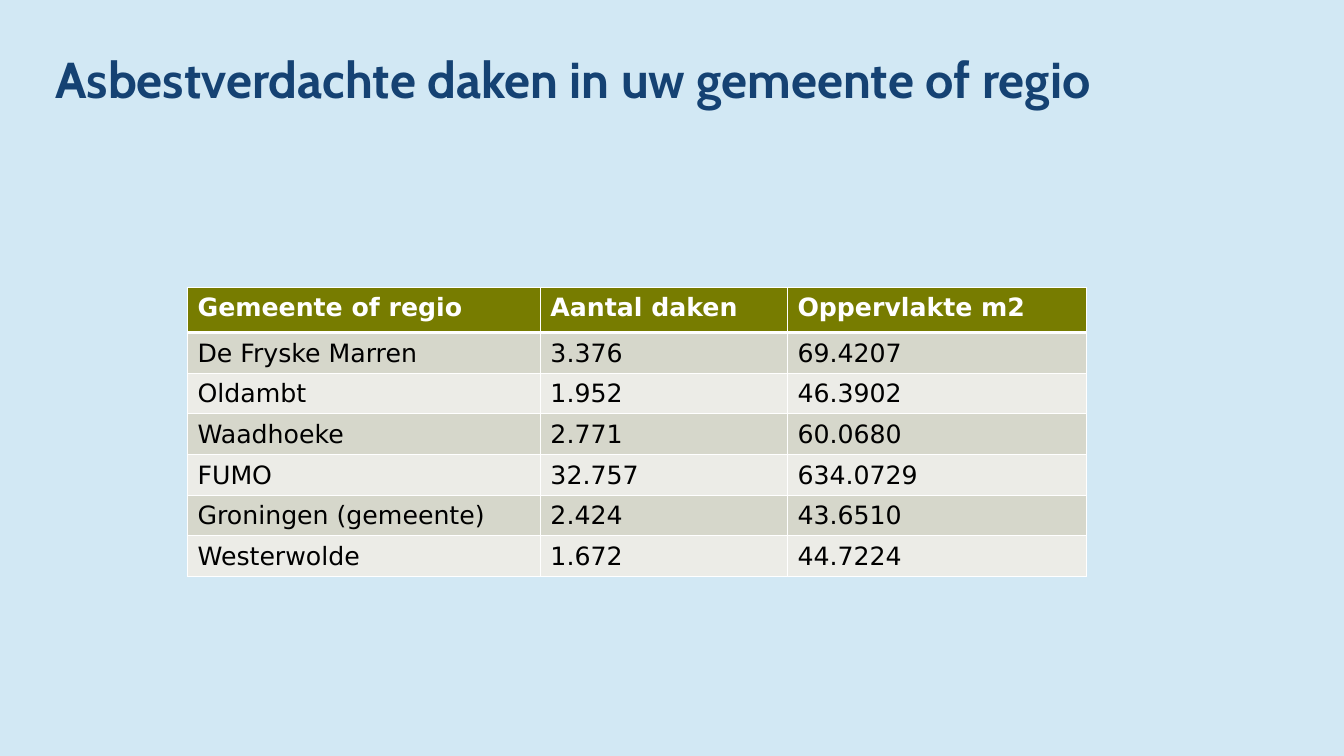
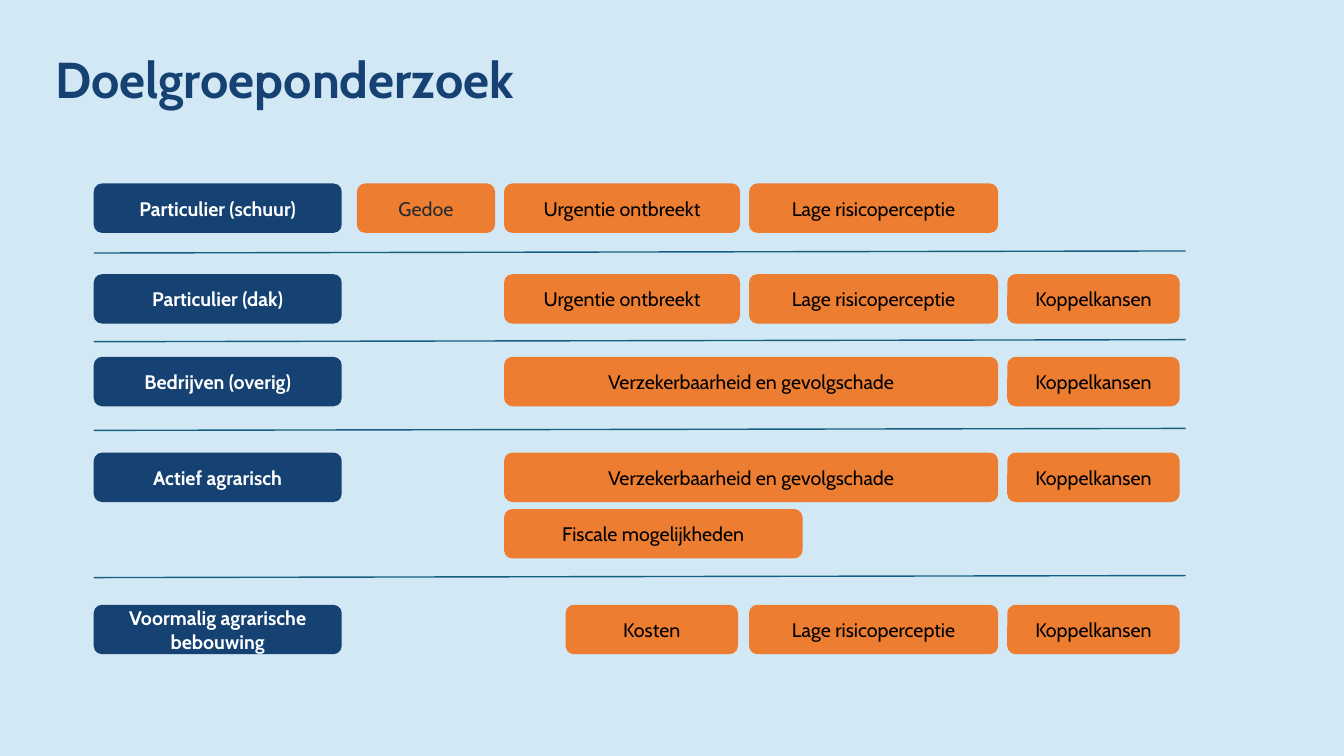
from pptx import Presentation
from pptx.dml.color import RGBColor
from pptx.enum.shapes import MSO_CONNECTOR, MSO_SHAPE
from pptx.enum.text import MSO_ANCHOR, PP_ALIGN
from pptx.oxml import parse_xml
from pptx.oxml.ns import nsdecls
from pptx.util import Inches, Pt

SKY = RGBColor(0xD2, 0xE8, 0xF4)
NAVY = RGBColor(0x15, 0x42, 0x73)
ORANGE = RGBColor(0xED, 0x7D, 0x31)
TEAL = RGBColor(0x15, 0x60, 0x82)
OLIVE = RGBColor(0x77, 0x7C, 0x00)
BAND_DARK = RGBColor(0xD6, 0xD7, 0xCB)
BAND_LIGHT = RGBColor(0xEC, 0xEC, 0xE7)
WHITE = RGBColor(0xFF, 0xFF, 0xFF)
BLACK = RGBColor(0x00, 0x00, 0x00)
CHARCOAL = RGBColor(0x2B, 0x2B, 0x2B)
BRAND_FONT = "Cabin"
TABLE_FONT = "DejaVu Sans"

ROOF_TITLE = "Asbestverdachte daken in uw gemeente of regio"
ROOF_ROWS = [
    ("Gemeente of regio", "Aantal daken", "Oppervlakte m2"),
    ("De Fryske Marren", "3.376", "69.4207"),
    ("Oldambt", "1.952", "46.3902"),
    ("Waadhoeke", "2.771", "60.0680"),
    ("FUMO", "32.757", "634.0729"),
    ("Groningen (gemeente)", "2.424", "43.6510"),
    ("Westerwolde", "1.672", "44.7224"),
]
COLUMN_WIDTHS = [3.5, 2.45, 2.97]
HEADER_HEIGHT, ROW_HEIGHT = 0.45, 0.4

RESEARCH_TITLE = "Doelgroeponderzoek"
THEMES = {
    "Gedoe": (3.54, 1.37),
    "Urgentie ontbreekt": (5, 2.34),
    "Verzekerbaarheid en gevolgschade": (5, 4.9),
    "Fiscale mogelijkheden": (5, 2.96),
    "Kosten": (5.61, 1.71),
    "Lage risicoperceptie": (7.43, 2.47),
    "Koppelkansen": (9.99, 1.71),
}
TARGET_GROUPS = [
    ("Particulier (schuur)", 1.82, [["Gedoe", "Urgentie ontbreekt", "Lage risicoperceptie"]]),
    ("Particulier (dak)", 2.72, [["Urgentie ontbreekt", "Lage risicoperceptie", "Koppelkansen"]]),
    ("Bedrijven (overig)", 3.54, [["Verzekerbaarheid en gevolgschade", "Koppelkansen"]]),
    ("Actief agrarisch", 4.49, [["Verzekerbaarheid en gevolgschade", "Koppelkansen"],
                                ["Fiscale mogelijkheden"]]),
    ("Voormalig agrarische bebouwing", 6, [["Kosten", "Lage risicoperceptie", "Koppelkansen"]]),
]
THEME_COLORS = {"Gedoe": CHARCOAL}
DIVIDERS = [2.51, 3.39, 4.27, 5.73]
DIVIDER_RISE = 0.02
LABEL_LEFT, LABEL_WIDTH, DIVIDER_RIGHT = 0.93, 2.46, 11.76
BOX_HEIGHT, LINE_STEP = 0.49, 0.56


def add_run(paragraph, text, size, color, bold=False, font=BRAND_FONT):
    run = paragraph.add_run()
    run.text = text
    run.font.name = font
    run.font.size = Pt(size)
    run.font.bold = bold
    run.font.color.rgb = color


def add_titled_slide(presentation, title):
    slide = presentation.slides.add_slide(presentation.slide_layouts[6])
    slide.background.fill.solid()
    slide.background.fill.fore_color.rgb = SKY
    box = slide.shapes.add_textbox(Inches(0.45), Inches(0.5), Inches(11.71), Inches(0.67))
    box.text_frame.word_wrap = True
    paragraph = box.text_frame.paragraphs[0]
    paragraph.line_spacing = 0.9
    add_run(paragraph, title, 36, NAVY, bold=True)
    return slide


def set_borders(cell, widths):
    properties = cell._tc.get_or_add_tcPr()
    for side, width in zip("LRTB", widths):
        properties.append(parse_xml(
            f'<a:ln{side} {nsdecls("a")} w="{Pt(width)}"><a:solidFill>'
            f'<a:srgbClr val="{WHITE}"/></a:solidFill></a:ln{side}>'))


def add_roof_table(slide):
    heights = [HEADER_HEIGHT] + [ROW_HEIGHT] * (len(ROOF_ROWS) - 1)
    table = slide.shapes.add_table(
        len(ROOF_ROWS), len(COLUMN_WIDTHS), Inches(1.86), Inches(2.85),
        Inches(sum(COLUMN_WIDTHS)), Inches(sum(heights))).table
    for column, width in zip(table.columns, COLUMN_WIDTHS):
        column.width = Inches(width)
    for row_index, values in enumerate(ROOF_ROWS):
        table.rows[row_index].height = Inches(heights[row_index])
        is_header = row_index == 0
        band = BAND_DARK if row_index % 2 else BAND_LIGHT
        top = 2 if row_index == 1 else 0.75
        bottom = 2 if is_header else 0.75
        for column_index, value in enumerate(values):
            cell = table.cell(row_index, column_index)
            set_borders(cell, (0.75, 0.75, top, bottom))
            cell.fill.solid()
            cell.fill.fore_color.rgb = OLIVE if is_header else band
            paragraph = cell.text_frame.paragraphs[0]
            paragraph.line_spacing = Pt(21.8)
            add_run(paragraph, value, 18, WHITE if is_header else BLACK, is_header, TABLE_FONT)


def add_box(slide, text, left, top, width, fill, color, bold=False):
    shape = slide.shapes.add_shape(
        MSO_SHAPE.ROUNDED_RECTANGLE, Inches(left), Inches(top), Inches(width), Inches(BOX_HEIGHT))
    shape.shadow.inherit = False
    shape.fill.solid()
    shape.fill.fore_color.rgb = fill
    shape.line.fill.background()
    frame = shape.text_frame
    frame.word_wrap = True
    frame.vertical_anchor = MSO_ANCHOR.MIDDLE
    paragraph = frame.paragraphs[0]
    paragraph.alignment = PP_ALIGN.CENTER
    add_run(paragraph, text, 14, color, bold)


def add_divider(slide, top):
    line = slide.shapes.add_connector(
        MSO_CONNECTOR.STRAIGHT, Inches(LABEL_LEFT), Inches(top),
        Inches(DIVIDER_RIGHT), Inches(top - DIVIDER_RISE))
    line.line.color.rgb = TEAL
    line.line.width = Pt(1)
    line._element.spPr.append(parse_xml(f'<a:effectLst {nsdecls("a")}/>'))


def add_target_groups(slide):
    for label, top, theme_lines in TARGET_GROUPS:
        add_box(slide, label, LABEL_LEFT, top, LABEL_WIDTH, NAVY, WHITE, bold=True)
        for line_index, themes in enumerate(theme_lines):
            for theme in themes:
                left, width = THEMES[theme]
                add_box(slide, theme, left, top + line_index * LINE_STEP, width,
                        ORANGE, THEME_COLORS.get(theme, BLACK))
    for top in DIVIDERS:
        add_divider(slide, top)


def main():
    presentation = Presentation()
    presentation.slide_width = Inches(13.33)
    presentation.slide_height = Inches(7.5)
    add_roof_table(add_titled_slide(presentation, ROOF_TITLE))
    add_target_groups(add_titled_slide(presentation, RESEARCH_TITLE))
    presentation.save("out.pptx")


if __name__ == "__main__":
    main()
